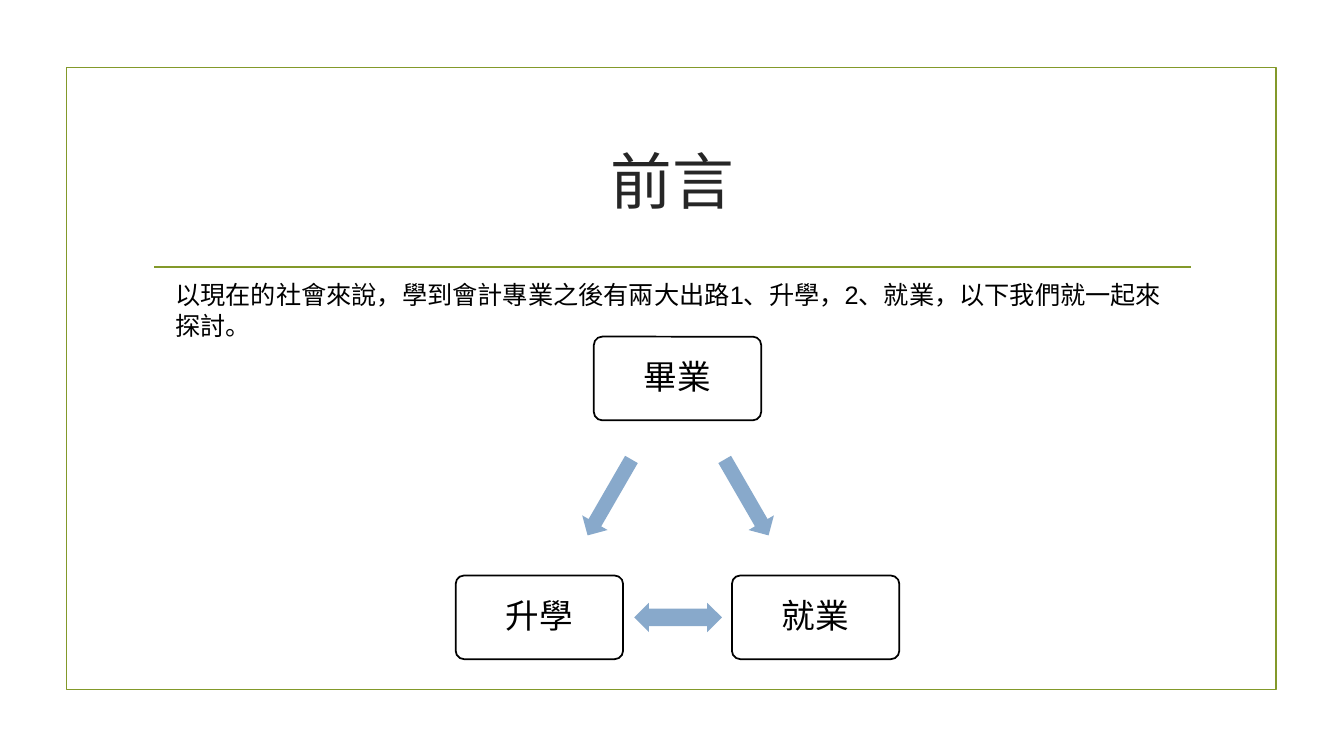
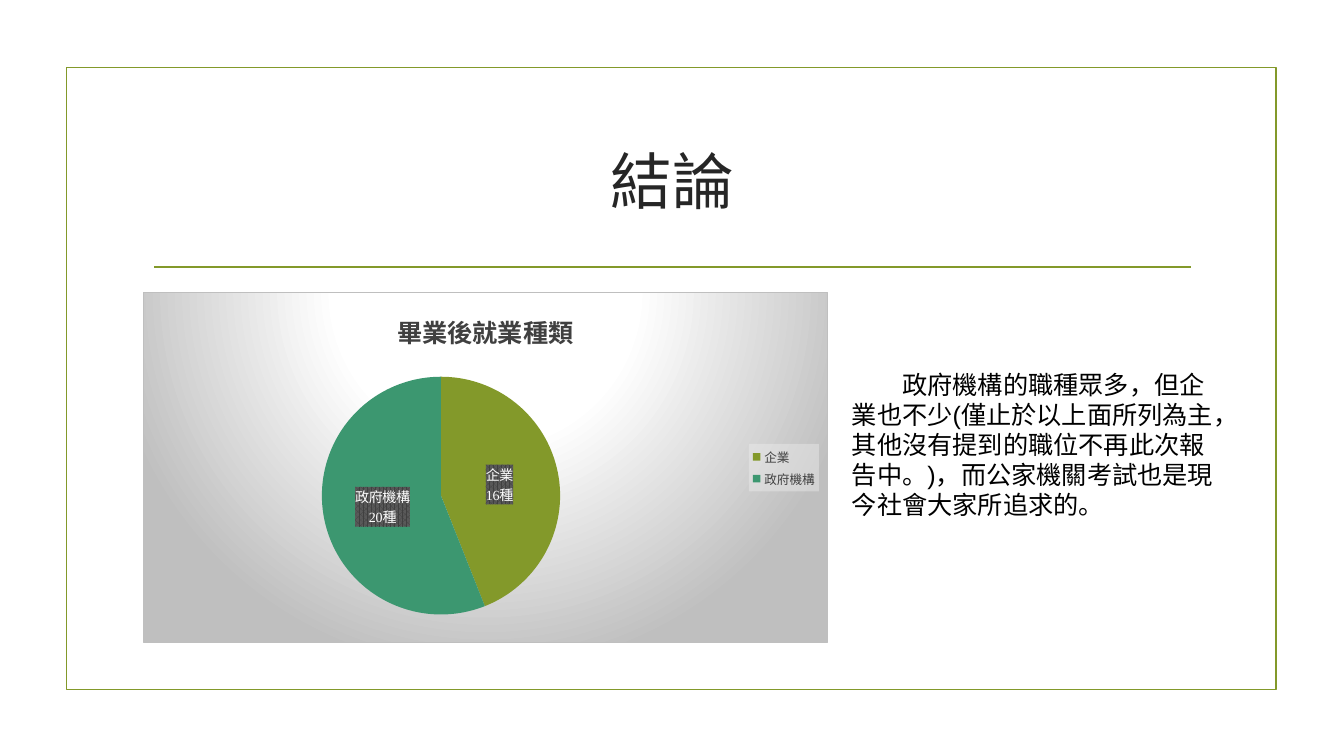
import pptx
import pptx.util
import pptx.oxml
import pptx.chart.data
import pptx.dml.color
import pptx.enum.chart
import pptx.enum.shapes
import pptx.enum.text
from pptx.oxml.ns import qn

RGB = pptx.dml.color.RGBColor
SHAPE = pptx.enum.shapes.MSO_SHAPE
ALIGN = pptx.enum.text.PP_ALIGN
ANCHOR = pptx.enum.text.MSO_ANCHOR
CHART = pptx.enum.chart
Pt = pptx.util.Pt

BLACK = RGB(0x00, 0x00, 0x00)
WHITE = RGB(0xFF, 0xFF, 0xFF)
OLIVE = RGB(0x83, 0x99, 0x2A)
GREEN = RGB(0x3C, 0x97, 0x70)
BLUE = RGB(0x88, 0xA9, 0xCB)
INK = RGB(0x26, 0x26, 0x26)
GREY = RGB(0x40, 0x40, 0x40)

SERIF = "Times New Roman"
SANS = "Arial"
THIN = 1.25

CHART_FILL = """<a:gradFill><a:gsLst>
<a:gs pos="0"><a:srgbClr val="FFFFFF"/></a:gs>
<a:gs pos="39000"><a:srgbClr val="FFFFFF"/></a:gs>
<a:gs pos="100000"><a:srgbClr val="BFBFBF"/></a:gs></a:gsLst>
<a:path path="circle"><a:fillToRect l="50000" t="-80000" r="50000" b="180000"/></a:path>
</a:gradFill><a:ln w="9525"><a:solidFill><a:srgbClr val="BFBFBF"/></a:solidFill></a:ln>"""
LABEL_FILL = """<a:pattFill prst="pct75"><a:fgClr><a:srgbClr val="404040"/></a:fgClr>
<a:bgClr><a:srgbClr val="595959"/></a:bgClr></a:pattFill><a:ln><a:noFill/></a:ln>"""
LEGEND_FILL = """<a:solidFill><a:srgbClr val="F2F2F2"><a:alpha val="39000"/></a:srgbClr>
</a:solidFill><a:ln><a:noFill/></a:ln>"""


def px(n):
    """Turn px (100 to the inch) into EMU."""
    return pptx.util.Emu(n * 9144)


def style(font, size, color, name, bold=False):
    font.size = Pt(size)
    font.color.rgb = color
    font.name = name
    font.bold = bold


def write(frame, text, size, color, name, align=ALIGN.LEFT, anchor=ANCHOR.MIDDLE):
    frame.word_wrap = True
    frame.vertical_anchor = anchor
    para = frame.paragraphs[0]
    para.text = text
    para.alignment = align
    style(para.font, size, color, name)
    return para


def add_text(slide, left, top, width, height, *args, **opts):
    box = slide.shapes.add_textbox(px(left), px(top), px(width), px(height))
    return write(box.text_frame, *args, **opts)


def add_shape(slide, kind, left, top, width, height, fill=None, line=None):
    shape = slide.shapes.add_shape(kind, px(left), px(top), px(width), px(height))
    shape.shadow.inherit = False
    if fill is None:
        shape.fill.background()
    else:
        shape.fill.solid()
        shape.fill.fore_color.rgb = fill
    if line is None:
        shape.line.fill.background()
    else:
        shape.line.color.rgb = line
        shape.line.width = Pt(THIN)
    return shape


def add_rule(slide, left, right, top):
    rule = slide.shapes.add_connector(
        pptx.enum.shapes.MSO_CONNECTOR.STRAIGHT, px(left), px(top), px(right), px(top))
    rule.line.color.rgb = OLIVE
    rule.line.width = Pt(THIN)
    rule._element.spPr.append(pptx.oxml.parse_xml(
        '<a:effectLst xmlns:a="http://schemas.openxmlformats.org/drawingml/2006/main"/>'))


def new_slide(deck, title):
    """Add a slide with the shared frame, rule and title."""
    slide = deck.slides.add_slide(deck.slide_layouts[6])
    add_shape(slide, SHAPE.RECTANGLE, 66, 67, 1200, 617, line=OLIVE)
    add_rule(slide, 153, 1181, 265)
    add_text(slide, 142, 107, 1050, 143, title, 44, INK, SERIF, ALIGN.CENTER)
    return slide


def add_node(slide, mid, top, text):
    node = add_shape(slide, SHAPE.ROUNDED_RECTANGLE, mid - 83, top, 166, 83, WHITE, BLACK)
    node.adjustments[0] = 0.1
    write(node.text_frame, text, 24, BLACK, SERIF, ALIGN.CENTER).line_spacing = 0.9


def add_arrow(slide, kind, mid, top, turn=0):
    arrow = add_shape(slide, kind, mid - 43, top, 87, 29, BLUE)
    arrow.rotation = turn
    return arrow


def add_cycle(slide, mid):
    """Draw three linked boxes, mirrored about the x position mid."""
    add_node(slide, mid, 334, "畢業")
    for side, text in ((-1, "升學"), (1, "就業")):
        add_node(slide, mid + side * 137, 571, text)
        add_arrow(slide, SHAPE.RIGHT_ARROW, mid + side * 68, 479, 90 - side * 30)
    both = add_arrow(slide, SHAPE.LEFT_RIGHT_ARROW, mid, 598)
    both.adjustments[0] = 0.6


def chart_xml(tag, body):
    return pptx.oxml.parse_xml(
        f'<c:{tag} xmlns:c="http://schemas.openxmlformats.org/drawingml/2006/chart" '
        f'xmlns:a="http://schemas.openxmlformats.org/drawingml/2006/main">{body}</c:{tag}>')


def place_plot(chart, **box):
    """Fix the inner plot area, given as fractions of the chart."""
    plot = chart._chartSpace.chart.plotArea
    for old in plot.findall(qn("c:layout")):
        plot.remove(old)
    spots = "".join(f'<c:{key} val="{val}"/>' for key, val in box.items())
    plot.insert(0, chart_xml("layout", (
        '<c:manualLayout><c:layoutTarget val="inner"/><c:xMode val="edge"/>'
        f'<c:yMode val="edge"/>{spots}</c:manualLayout>')))


def style_slice(point, color, lines):
    point.format.fill.solid()
    point.format.fill.fore_color.rgb = color
    label = point.data_label
    frame = label.text_frame
    frame.text = "\n".join(lines)
    for para in frame.paragraphs:
        for run in para.runs:
            style(run.font, 10, WHITE, SERIF)
    label.position = CHART.XL_LABEL_POSITION.CENTER
    rich = frame._txBody
    rich.getparent().addnext(chart_xml("spPr", LABEL_FILL))


def add_pie(slide, left, top, width, height, title, slices):
    data = pptx.chart.data.CategoryChartData()
    data.categories = [name for name, *_ in slices]
    data.add_series(title, [share for _, share, *_ in slices])
    chart = slide.shapes.add_chart(
        CHART.XL_CHART_TYPE.PIE, px(left), px(top), px(width), px(height), data).chart
    style(chart.font, 10, BLACK, SERIF)
    chart._chartSpace.chart.addnext(chart_xml("spPr", CHART_FILL))
    place_plot(chart, x=0.01, y=0.24, w=0.85, h=0.68)

    chart.has_title = True
    head = chart.chart_title.text_frame
    head.text = title
    style(head.paragraphs[0].font, 18, GREY, SERIF, True)

    chart.has_legend = True
    legend = chart.legend
    legend.position = CHART.XL_LEGEND_POSITION.RIGHT
    legend.include_in_layout = False
    style(legend.font, 9, GREY, SERIF)
    legend._element.find(qn("c:overlay")).addnext(chart_xml("spPr", LEGEND_FILL))

    plot = chart.plots[0]
    plot.vary_by_categories = True
    for i, (name, _, count, color) in enumerate(slices):
        style_slice(plot.series[0].points[i], color, (name, count))


def build_intro(deck):
    slide = new_slide(deck, "前言")
    add_text(slide, 164, 272, 1006, 71,
             "以現在的社會來說，學到會計專業之後有兩大出路1、升學，2、就業，以下我們就一起來探討。",
             18, BLACK, SANS)
    add_cycle(slide, 672)


def build_close(deck):
    slide = new_slide(deck, "結論")
    add_pie(slide, 142, 290, 679, 348, "畢業後就業種類",
            [("企業", 44, "16種", OLIVE), ("政府機構", 56, "20種", GREEN)])
    para = add_text(
        slide, 835, 361, 392, 162,
        "政府機構的職種眾多，但企業也不少(僅止於以上面所列為主，其他沒有提到的職位不再此次報告中。)，"
        "而公家機關考試也是現今社會大家所追求的。",
        18, BLACK, SANS, anchor=ANCHOR.TOP)
    para._p.get_or_add_pPr().set("indent", str(px(50)))


def main():
    deck = pptx.Presentation()
    deck.slide_width, deck.slide_height = px(1333), px(750)
    build_intro(deck)
    build_close(deck)
    deck.save("out.pptx")


if __name__ == "__main__":
    main()
